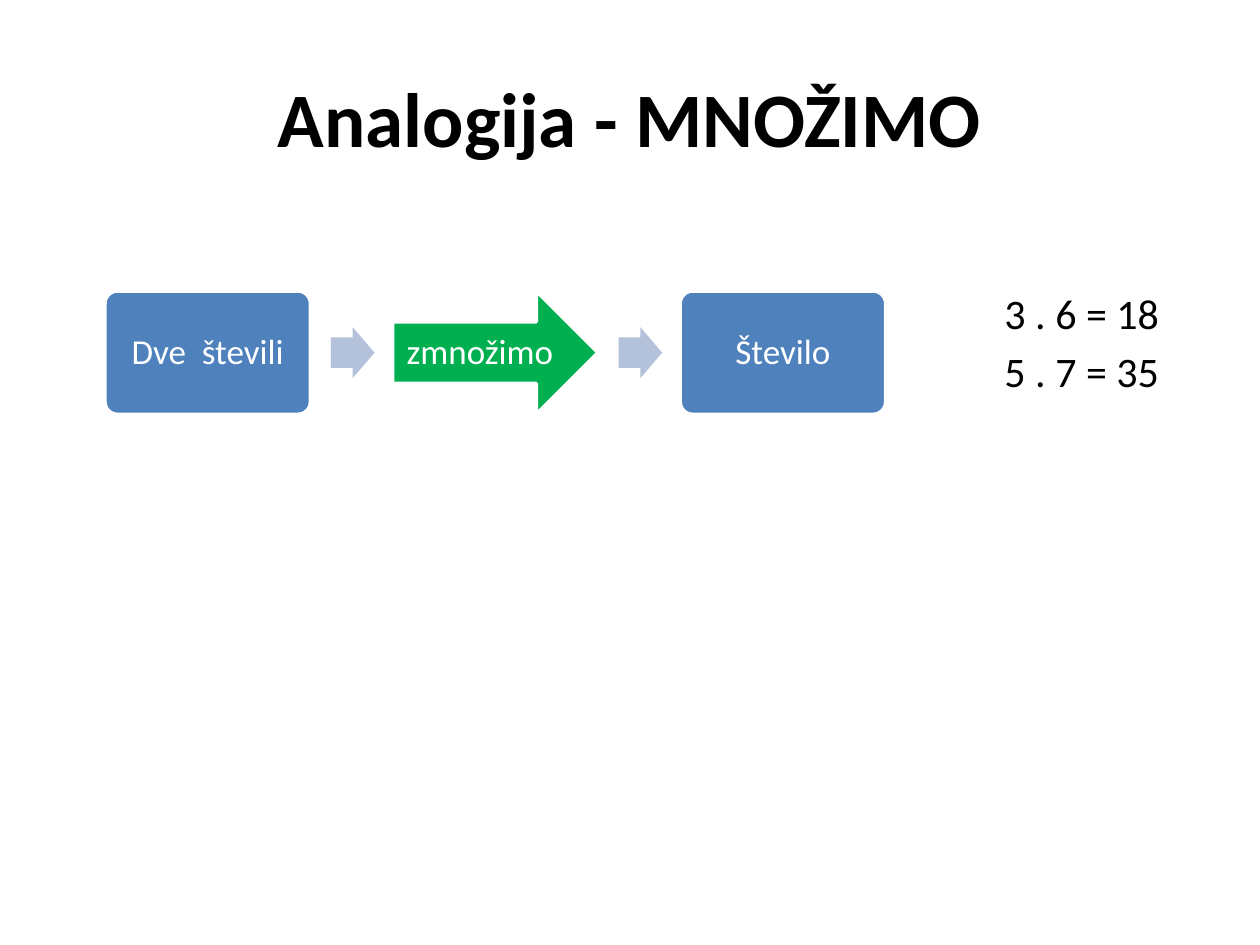
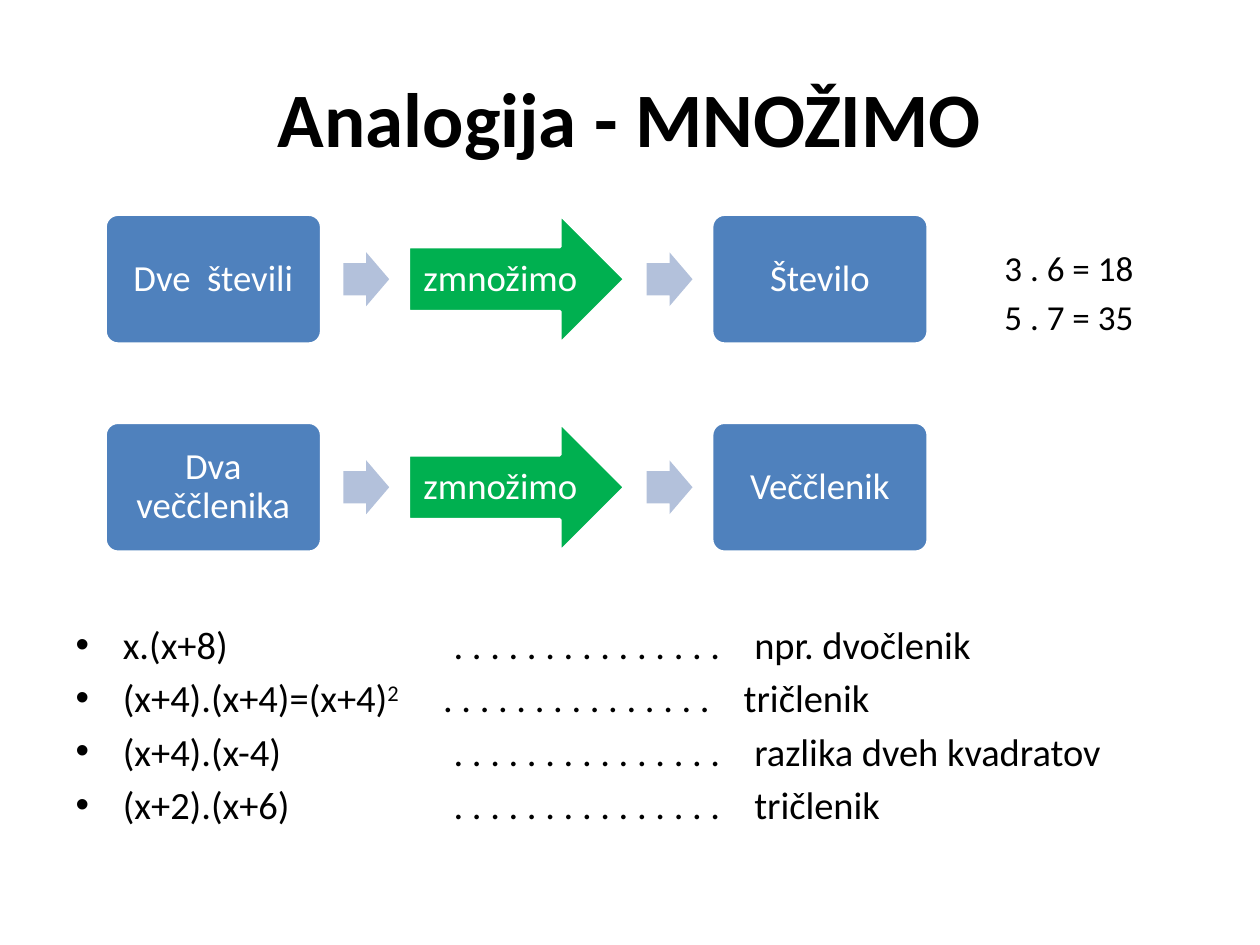
"""Build two slides on the analogy between multiplying numbers and polynomials."""
from lxml import etree
from pptx import Presentation
from pptx.dml.color import RGBColor
from pptx.enum.shapes import MSO_SHAPE
from pptx.enum.text import MSO_ANCHOR, PP_ALIGN
from pptx.oxml.ns import qn
from pptx.util import Pt

TITLE = "Analogija - MNOŽIMO"
NUMBERS = ("Dve  števili", "zmnožimo", "Število")
POLYNOMIALS = ("Dva veččlenika", "zmnožimo", "Veččlenik")
EXAMPLES = ("3 . 6 = 18", "5 . 7 = 35")
DOTS = " ".join("." * 15)
PRODUCTS = [
    ("x.(x+8)", "", "npr. dvočlenik", 6),
    ("(x+4).(x+4)=(x+4)", "2", "tričlenik", 0),
    ("(x+4).(x-4)", "", "razlika dveh kvadratov", 6),
    ("(x+2).(x+6)", "", "tričlenik", 6),
]
SLIDES = [
    {"flows": [(NUMBERS, 166.3)], "box_w": 117.4, "flow_size": 20,
     "examples_top": 164, "examples_size": 24, "products": []},
    {"flows": [(NUMBERS, 122.4), (POLYNOMIALS, 241.3)], "box_w": 123.8, "flow_size": 21,
     "examples_top": 141, "examples_size": 20, "products": PRODUCTS},
]

FONT = "Calibri"
BLACK = RGBColor(0x00, 0x00, 0x00)
WHITE = RGBColor(0xFF, 0xFF, 0xFF)
BLUE = RGBColor(0x4F, 0x81, 0xBD)
GREEN = RGBColor(0x00, 0xB0, 0x50)
PALE_BLUE = RGBColor(0xB3, 0xC1, 0xDB)
BOX = MSO_SHAPE.ROUNDED_RECTANGLE
ARROW = MSO_SHAPE.RIGHT_ARROW
MIDDLE = MSO_ANCHOR.MIDDLE
CENTER = PP_ALIGN.CENTER

FLOW_LEFT = 60
FLOW_STEPS = [(BOX, BLUE, [0.1]), (ARROW, GREEN, [0.5, 0.5]), (BOX, BLUE, [0.1])]
EXAMPLES_LEFT = 574
PRODUCTS_TOP, PRODUCT_SIZE = 355, 22
BULLET_INDENT = 27


def place(sp, left, top, width, height):
    sp.left, sp.top, sp.width, sp.height = Pt(left), Pt(top), Pt(width), Pt(height)


def add_run(p, text, size, color=BLACK, bold=False):
    r = p.add_run()
    r.text = text
    r.font.name, r.font.size, r.font.bold = FONT, Pt(size), bold
    r.font.color.rgb = color
    return r


def set_margins(tf, margin):
    tf.margin_left = tf.margin_right = tf.margin_top = tf.margin_bottom = Pt(margin)


def add_title(slide):
    sp = slide.shapes.title
    place(sp, 36, 21.6, 648, 90)
    tf = sp.text_frame
    tf.vertical_anchor = MIDDLE
    p = tf.paragraphs[0]
    p.alignment = CENTER
    add_run(p, TITLE, 44, bold=True)


def add_block(slide, kind, left, top, width, height, color, adjustments):
    sp = slide.shapes.add_shape(kind, Pt(left), Pt(top), Pt(width), Pt(height))
    for i, value in enumerate(adjustments):
        sp.adjustments[i] = value
    sp.shadow.inherit = False
    sp.fill.solid()
    sp.fill.fore_color.rgb = color
    sp.line.fill.background()
    return sp


def add_flow(slide, labels, top, box_w, size):
    """Draw three labelled steps with a small arrow in each gap."""
    box_h, link_w, link_h = 0.6 * box_w, 0.212 * box_w, 0.248 * box_w
    for i, (label, (kind, color, adjustments)) in enumerate(zip(labels, FLOW_STEPS)):
        left = FLOW_LEFT + i * 1.4 * box_w
        if i:
            add_block(slide, ARROW, left - 0.3 * box_w, top + (box_h - link_h) / 2,
                      link_w, link_h, PALE_BLUE, [0.6, 0.5])
        sp = add_block(slide, kind, left, top, box_w, box_h, color, adjustments)
        sp.line.color.rgb = WHITE
        sp.line.width = Pt(2)
        tf = sp.text_frame
        tf.word_wrap, tf.vertical_anchor = True, MIDDLE
        set_margins(tf, 6)
        p = tf.paragraphs[0]
        p.alignment, p.line_spacing = CENTER, 0.9
        add_run(p, label, size, WHITE)


def add_lines(slide, left, top, width, count, gap):
    """Add a text box and return its evenly spaced paragraphs."""
    sp = slide.shapes.add_textbox(Pt(left), Pt(top), Pt(width), Pt(count * 31))
    tf = sp.text_frame
    tf.word_wrap = True
    set_margins(tf, 0)
    paragraphs = [tf.paragraphs[0]] + [tf.add_paragraph() for _ in range(count - 1)]
    for p in paragraphs[1:]:
        p.space_before = Pt(gap)
    return paragraphs


def indent(p, left, first=0, bullet=None):
    pPr = p._p.get_or_add_pPr()
    pPr.set("marL", str(Pt(left)))
    pPr.set("indent", str(Pt(first)))
    if bullet:
        etree.SubElement(pPr, qn("a:buFont")).set("typeface", "Arial")
        etree.SubElement(pPr, qn("a:buChar")).set("char", bullet)


def add_examples(slide, top, size):
    for p, text in zip(add_lines(slide, EXAMPLES_LEFT, top, 110, len(EXAMPLES), 0.2 * size), EXAMPLES):
        add_run(p, text, size)


def add_products(slide, products):
    columns = [add_lines(slide, left, PRODUCTS_TOP, width, len(products), 4)
               for left, width in ((43.2, 205), (253.2, 168), (425, 240))]
    for (product, power, name, shift), expression, dots, result in zip(products, *columns):
        indent(expression, BULLET_INDENT, -BULLET_INDENT, "•")
        add_run(expression, product, PRODUCT_SIZE)
        if power:
            r = add_run(expression, power, PRODUCT_SIZE)
            r.font._element.set("baseline", "30000")
        for p, text in ((dots, DOTS), (result, name)):
            indent(p, shift)
            add_run(p, text, PRODUCT_SIZE)


def main():
    prs = Presentation()
    prs.slide_width, prs.slide_height = Pt(720), Pt(540)
    for content in SLIDES:
        slide = prs.slides.add_slide(prs.slide_layouts[5])
        add_title(slide)
        add_examples(slide, content["examples_top"], content["examples_size"])
        for labels, top in content["flows"]:
            add_flow(slide, labels, top, content["box_w"], content["flow_size"])
        if content["products"]:
            add_products(slide, content["products"])
    prs.save("out.pptx")


if __name__ == "__main__":
    main()
